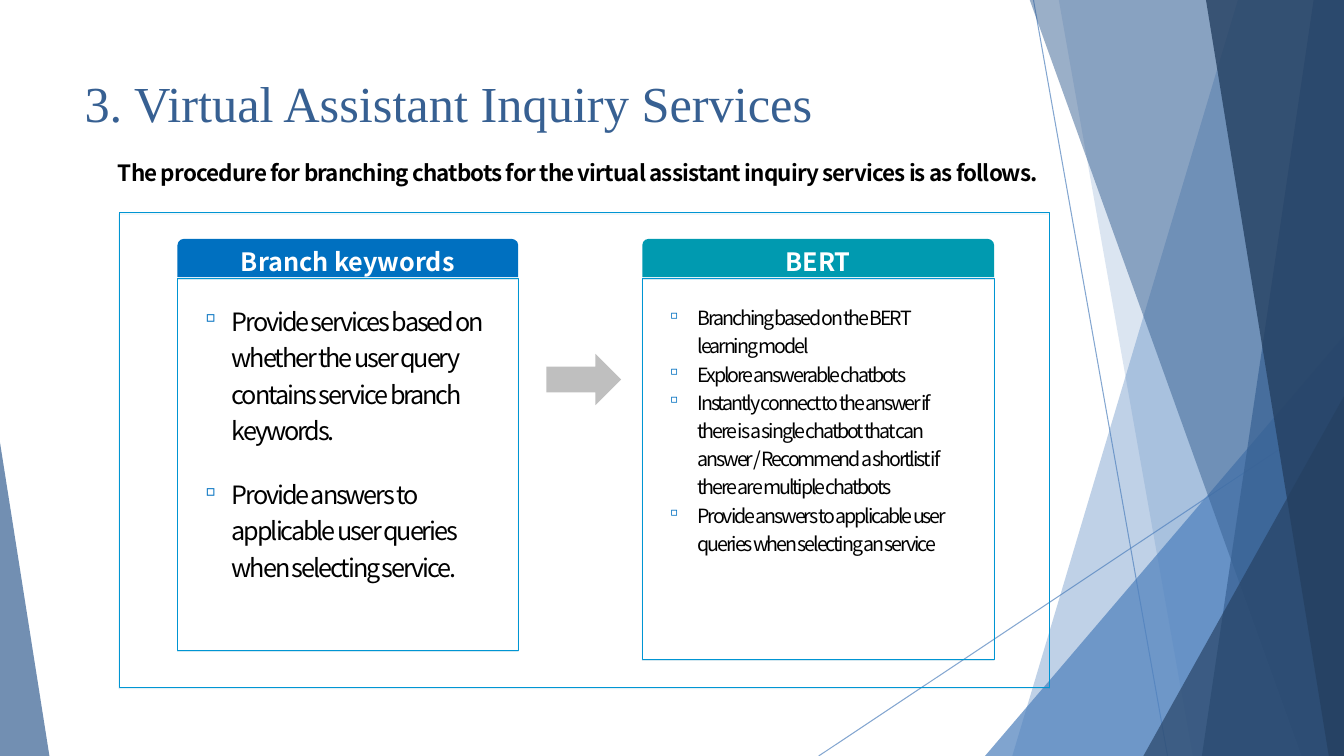
from dataclasses import dataclass

from lxml.etree import SubElement
from pptx import Presentation
from pptx.dml.color import RGBColor
from pptx.enum.shapes import MSO_CONNECTOR, MSO_SHAPE
from pptx.enum.text import MSO_ANCHOR, PP_ALIGN
from pptx.oxml.ns import qn
from pptx.util import Pt

SCALE = 9144
WIDTH, HEIGHT = 1333, 750


@dataclass(frozen=True)
class Theme:
    """Colours, fonts and type sizes of the slide."""
    sky: str = "4F81BD"
    steel: str = "376092"
    navy: str = "254061"
    blue: str = "0070C0"
    teal: str = "009AB0"
    outline: str = "0095D3"
    shade: str = "0078A8"
    grey: str = "BFBFBF"
    black: str = "000000"
    white: str = "FFFFFF"
    serif: str = "Times New Roman"
    sans: str = "Noto Sans CJK KR"
    title: int = 36
    large: int = 18
    lead: int = 16
    small: int = 14


class SlideBuilder:
    """Draws elements on one slide with one theme."""

    def __init__(self, slide, theme):
        """Keep the slide and its theme."""
        self.slide = slide
        self.shapes = slide.shapes
        self.theme = theme

    def emu(self, *lengths):
        """Turn px into EMU."""
        return [length * SCALE for length in lengths]

    def fade(self, fill, opacity):
        """Set the opacity of a solid fill in percent."""
        colour = fill._xPr.find(qn("a:solidFill"))[0]
        SubElement(colour, qn("a:alpha"), val=str(opacity * 1000))

    def paint(self, shape, colour, opacity=100):
        """Give a shape a plain fill without line or shadow."""
        shape.shadow.inherit = False
        shape.fill.solid()
        shape.fill.fore_color.rgb = RGBColor.from_string(colour)
        if opacity < 100:
            self.fade(shape.fill, opacity)
        shape.line.fill.background()

    def facet(self, corners, colour, opacity):
        """Draw a translucent polygon."""
        builder = self.shapes.build_freeform(*corners[0], scale=SCALE)
        builder.add_line_segments(corners[1:], close=True)
        self.paint(builder.convert_to_shape(), colour, opacity)

    def block(self, kind, box, colour, opacity=100, apex=None):
        """Draw a filled preset shape."""
        shape = self.shapes.add_shape(kind, *self.emu(*box))
        self.paint(shape, colour, opacity)
        if apex is not None:
            shape.adjustments[0] = apex

    def ray(self, start, end):
        """Draw a thin translucent line."""
        line = self.shapes.add_connector(
            MSO_CONNECTOR.STRAIGHT, *self.emu(*start, *end))
        line.line.width = Pt(0.75)
        line.line.color.rgb = RGBColor.from_string(self.theme.sky)
        self.fade(line.line.fill, 70)
        SubElement(line._element.spPr, qn("a:effectLst"))

    def frame(self, box):
        """Draw an unfilled outline with a faint shadow below."""
        frame = self.shapes.add_shape(MSO_SHAPE.RECTANGLE, *self.emu(*box))
        frame.fill.background()
        frame.line.color.rgb = RGBColor.from_string(self.theme.outline)
        frame.line.width = Pt(0.5)
        frame.shadow.inherit = False
        effects = frame._element.spPr.find(qn("a:effectLst"))
        shadow = SubElement(effects, qn("a:outerShdw"), blurRad="0",
                            dist=str(Pt(1)), dir="5400000", rotWithShape="0")
        colour = SubElement(shadow, qn("a:srgbClr"), val=self.theme.shade)
        SubElement(colour, qn("a:alpha"), val="17000")

    def bullet(self, paragraph):
        """Add a small square bullet with a hanging indent."""
        props = paragraph._p.get_or_add_pPr()
        indent = 31 * SCALE
        props.set("marL", str(indent))
        props.set("indent", str(-indent))
        colour = SubElement(props, qn("a:buClr"))
        SubElement(colour, qn("a:srgbClr"), val=self.theme.blue)
        SubElement(props, qn("a:buSzPct"), val="90000")
        SubElement(props, qn("a:buChar"), char="▫")

    def text(self, box, lines, size, colour, font=None, bold=False, tracking=0,
             align=PP_ALIGN.LEFT, anchor=MSO_ANCHOR.TOP, spacing=1.2,
             inset=(0, 0), bullets=False, gap=0):
        """Write paragraphs in a text box."""
        frame = self.shapes.add_textbox(*self.emu(*box)).text_frame
        frame.word_wrap = True
        frame.vertical_anchor = anchor
        frame.margin_left = frame.margin_right = inset[0] * SCALE
        frame.margin_top = frame.margin_bottom = inset[1] * SCALE
        for index, line in enumerate(lines):
            paragraph = frame.add_paragraph() if index else frame.paragraphs[0]
            if bullets:
                self.bullet(paragraph)
            paragraph.alignment = align
            paragraph.line_spacing = spacing
            if index and gap:
                paragraph.space_before = Pt(gap)
            run = paragraph.add_run()
            run.text = line
            run.font.name = font or self.theme.sans
            run.font.size = Pt(size)
            run.font.bold = bold
            run.font.color.rgb = RGBColor.from_string(colour)
            if tracking:
                run._r.get_or_add_rPr().set("spc", str(tracking))

    def card(self, left, width, height, heading, colour, points_box, points,
             size, gap=0):
        """Draw a headed card with bullet points."""
        self.block(MSO_SHAPE.ROUND_2_SAME_RECTANGLE,
                   (left, 237, width, 38), colour)
        self.frame((left, 276, width, height))
        self.text((left, 244, width, 25), [heading], self.theme.large,
                  self.theme.white, bold=True, align=PP_ALIGN.CENTER,
                  anchor=MSO_ANCHOR.MIDDLE)
        self.text(points_box, points, size, self.theme.black,
                  tracking=-150, bullets=True, gap=gap)


def draw_backdrop(page):
    """Draw the faceted sides of the slide."""
    theme = page.theme
    page.ray((1025, 0), (1158, HEIGHT))
    page.ray((WIDTH, 403), (812, HEIGHT))

    def side_facet(top, bottom, colour, opacity):
        page.facet([(top, -1), (WIDTH, -1), (WIDTH, HEIGHT), (bottom, HEIGHT)],
                   colour, opacity)

    def corner(box, colour, opacity, apex=1):
        page.block(MSO_SHAPE.ISOSCELES_TRIANGLE, box, colour, opacity, apex)

    side_facet(1228, 1004, theme.sky, 36)
    side_facet(1050, 1183, theme.sky, 20)
    corner((977, 333, 356, 417), theme.sky, 72)
    side_facet(1021, 1291, theme.steel, 50)
    side_facet(1303, 1192, theme.steel, 70)
    side_facet(1196, 1318, theme.navy, 80)
    corner((1134, 393, 199, 357), theme.navy, 66)
    corner((0, 439, 49, 311), theme.steel, 70, apex=0)


def main():
    """Build and save the slide."""
    deck = Presentation()
    deck.slide_width, deck.slide_height = WIDTH * SCALE, HEIGHT * SCALE
    theme = Theme()
    page = SlideBuilder(deck.slides.add_slide(deck.slide_layouts[6]), theme)
    draw_backdrop(page)
    page.text((74, 67, 940, 144), ["3. Virtual Assistant Inquiry Services"],
              theme.title, theme.steel, theme.serif, spacing=1.0, inset=(10, 5))
    page.text((117, 152, 1136, 32),
              ["The procedure for branching chatbots for the virtual assistant "
               "inquiry services is as follows."],
              theme.lead, theme.black, bold=True, tracking=-60,
              anchor=MSO_ANCHOR.MIDDLE)
    page.card(176, 338, 369, "Branch keywords", theme.blue,
              (199, 298, 283, 121),
              ["Provide services based on whether the user query contains "
               "service branch keywords.",
               "Provide answers to applicable user queries when selecting "
               "service."],
              theme.large, gap=20)
    page.card(637, 349, 378, "BERT", theme.teal, (661, 299, 296, 177),
              ["Branching based on the BERT learning model",
               "Explore answerable chatbots",
               "Instantly connect to the answer if there is a single chatbot "
               "that can answer / Recommend a shortlist if there are multiple "
               "chatbots",
               "Provide answers to applicable user queries when selecting an "
               "service"],
              theme.small)
    page.block(MSO_SHAPE.RIGHT_ARROW, (542, 351, 74, 51), theme.grey)
    page.frame((118, 211, 923, 471))
    deck.save("out.pptx")


if __name__ == "__main__":
    main()
